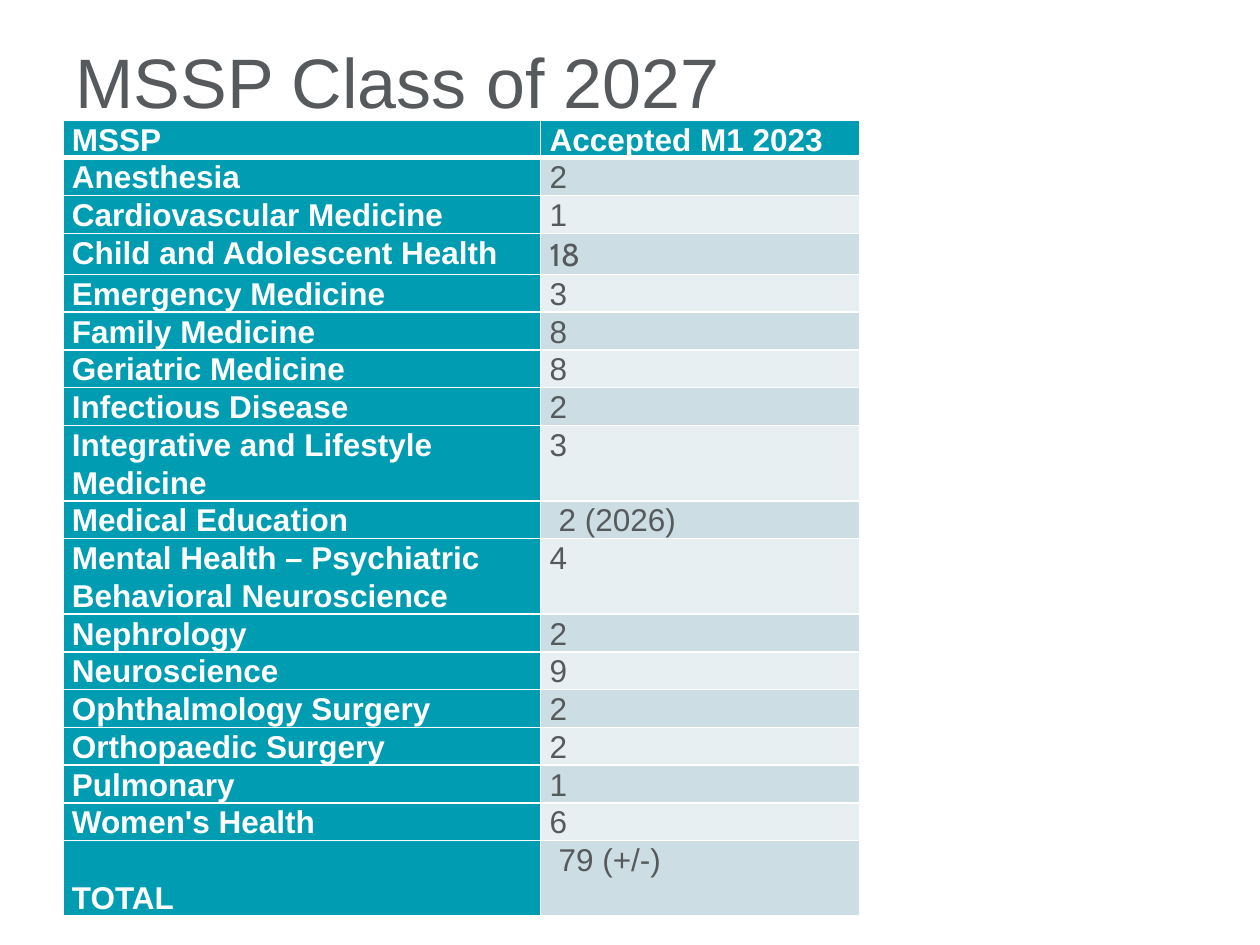
from lxml import etree
from pptx import Presentation
from pptx.dml.color import RGBColor
from pptx.enum.text import MSO_ANCHOR, MSO_AUTO_SIZE, PP_ALIGN
from pptx.oxml.ns import qn
from pptx.util import Cm, Pt

LEFT = PP_ALIGN.LEFT
TOP, MIDDLE, BOTTOM = MSO_ANCHOR.TOP, MSO_ANCHOR.MIDDLE, MSO_ANCHOR.BOTTOM
NO_AUTOFIT = MSO_AUTO_SIZE.NONE
TEAL, WHITE, GREY = "009CB1", "FFFFFF", "565A5C"
BANDS = ("CCDEE4", "E7EFF2")
ROW_HEIGHT = 0.76
INSET = 0.18
HEADER = ("MSSP", "Accepted M1 2023")
PROGRAMS = [
    ("Anesthesia", "2"),
    ("Cardiovascular Medicine", "1"),
    ("Child and Adolescent Health", "18"),
    ("Emergency Medicine", "3"),
    ("Family Medicine", "8"),
    ("Geriatric Medicine", "8"),
    ("Infectious Disease", "2"),
    ("Integrative and Lifestyle Medicine", "3"),
    ("Medical Education", "2 (2026)"),
    ("Mental Health – Psychiatric Behavioral Neuroscience", "4"),
    ("Nephrology", "2"),
    ("Neuroscience", "9"),
    ("Ophthalmology Surgery", "2"),
    ("Orthopaedic Surgery", "2"),
    ("Pulmonary", "1"),
    ("Women's Health", "6"),
    ("TOTAL", "79 (+/-)"),
]
TWO_LINE_ROWS = (8, 10, 17)


def rgb(value):
    """Return the colour for a hex string."""
    return RGBColor.from_string(value)


def write(paragraph, text, size, color, bold=False, font="Arial", spacing=1.07):
    """Add one formatted run to a left-aligned paragraph."""
    paragraph.alignment = LEFT
    paragraph.line_spacing = spacing
    run = paragraph.add_run()
    run.text = text
    run.font.name = font
    run.font.size = Pt(size)
    run.font.bold = bold
    run.font.color.rgb = rgb(color)


def set_borders(cell, top, bottom):
    """Draw white borders round a cell, with widths in points."""
    properties = cell._tc.get_or_add_tcPr()
    for side, width in (("L", 1), ("R", 1), ("T", top), ("B", bottom)):
        line = etree.SubElement(properties, qn(f"a:ln{side}"), w=str(Pt(width)))
        fill = etree.SubElement(line, qn("a:solidFill"))
        etree.SubElement(fill, qn("a:srgbClr"), val=WHITE)


def fill_cell(cell, text, fill, color, bold, row):
    """Write and format one table cell."""
    set_borders(cell, 3 if row == 1 else 1, 3 if row == 0 else 1)
    cell.fill.solid()
    cell.fill.fore_color.rgb = rgb(fill)
    cell.margin_left = Cm(2 * INSET if "(" in text else INSET)
    cell.margin_right = Cm(INSET)
    cell.margin_top = cell.margin_bottom = 0
    cell.vertical_anchor = BOTTOM if text == "TOTAL" else TOP
    font = "Cabin" if text == "18" else "Arial"
    write(cell.text_frame.paragraphs[0], text, 18, color, bold, font)


def add_title(slide, text):
    """Place and format the title placeholder."""
    title = slide.shapes.title
    title.left, title.top, title.width, title.height = Cm(1.27), Cm(0.76), Cm(15.44), Cm(1.93)
    frame = title.text_frame
    frame.auto_size = NO_AUTOFIT
    frame.vertical_anchor = MIDDLE
    write(frame.paragraphs[0], text, 40, GREY, spacing=0.9)


def add_program_table(slide):
    """Add the table of programs and accepted students."""
    rows = [HEADER] + PROGRAMS
    heights = [ROW_HEIGHT * (2 if row in TWO_LINE_ROWS else 1) for row in range(len(rows))]
    table = slide.shapes.add_table(
        len(rows), 2, Cm(1.27), Cm(2.42), Cm(16.06), Cm(sum(heights))
    ).table
    for column, width in zip(table.columns, (9.63, 6.43)):
        column.width = Cm(width)
    for row, (name, count) in enumerate(rows):
        table.rows[row].height = Cm(heights[row])
        fill_cell(table.cell(row, 0), name, TEAL, WHITE, True, row)
        header = row == 0
        fill = TEAL if header else BANDS[(row - 1) % 2]
        fill_cell(table.cell(row, 1), count, fill, WHITE if header else GREY, header, row)


def main():
    """Build and save the presentation."""
    presentation = Presentation()
    presentation.slide_width, presentation.slide_height = Cm(25.4), Cm(19.05)
    slide = presentation.slides.add_slide(presentation.slide_layouts[5])
    add_title(slide, "MSSP Class of 2027")
    add_program_table(slide)
    presentation.save("out.pptx")


if __name__ == "__main__":
    main()
